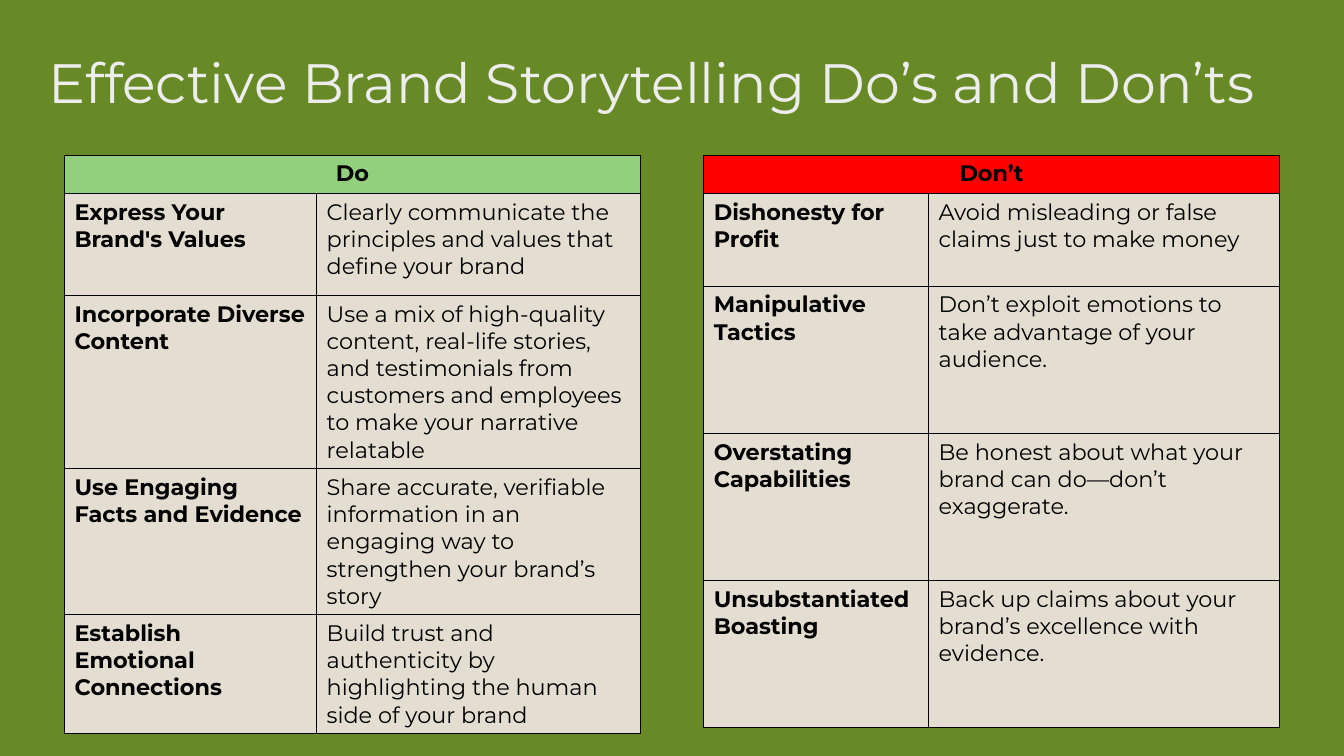
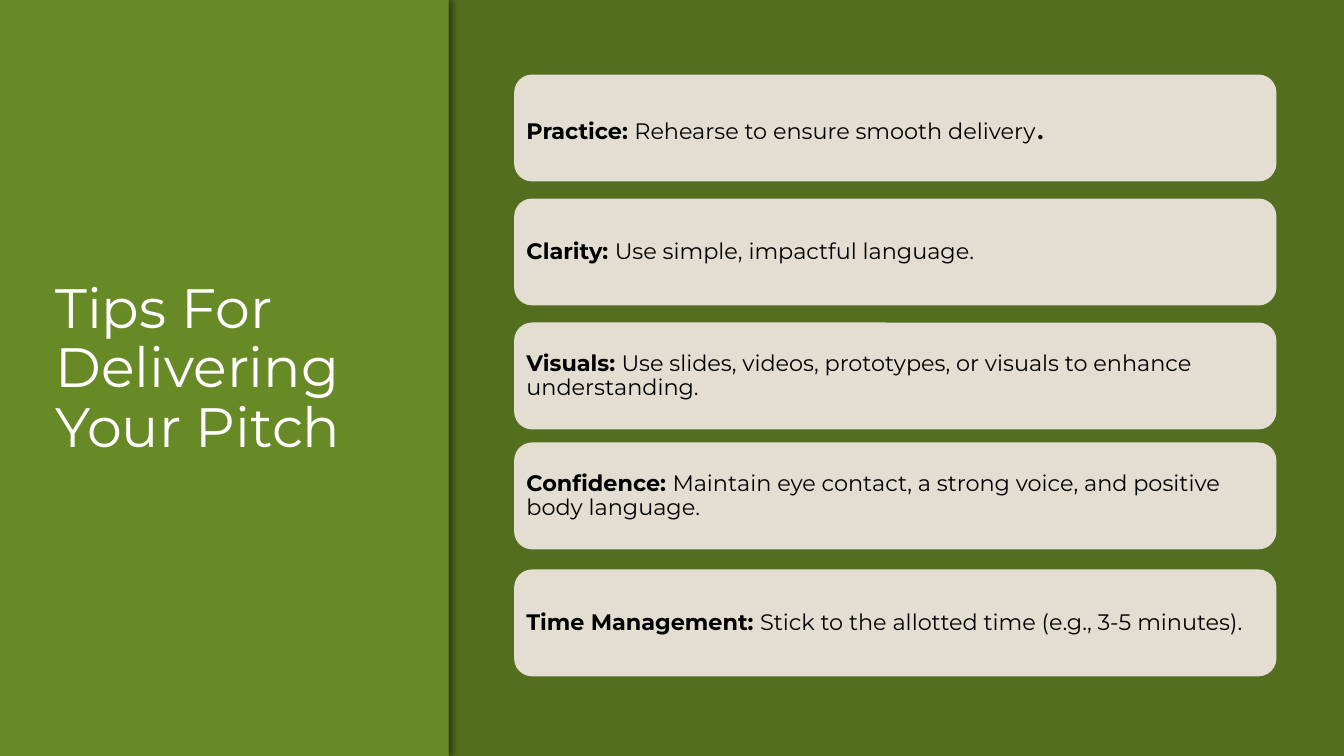
import pptx
import pptx.dml.color
import pptx.enum.shapes
import pptx.enum.text
import pptx.oxml
import pptx.oxml.ns
import pptx.util

Inches = pptx.util.Inches
Pt = pptx.util.Pt
ALIGN = pptx.enum.text.PP_ALIGN
ANCHOR = pptx.enum.text.MSO_ANCHOR
SHAPE = pptx.enum.shapes.MSO_SHAPE

COLORS = {
    "background": "678A26",
    "ink": "000000",
    "card": "E3DED1",
    "do": "93D07D",
    "dont": "FF0000",
    "title": "EDEDED",
    "white": "FFFFFF",
}
FONT = "Montserrat"

DO_ROWS = [
    ("Express Your Brand's Values",
     "Clearly communicate the principles and values that define your brand"),
    ("Incorporate Diverse Content",
     "Use a mix of high-quality content, real-life stories, and testimonials "
     "from customers and employees to make your narrative relatable"),
    ("Use Engaging Facts and Evidence",
     "Share accurate, verifiable information in an engaging way to strengthen your brand’s story"),
    ("Establish Emotional Connections",
     "Build trust and authenticity by highlighting the human side of your brand"),
]
DONT_ROWS = [
    ("Dishonesty for Profit", "Avoid misleading or false claims just to make money"),
    ("Manipulative Tactics", "Don’t exploit emotions to take advantage of your audience."),
    ("Overstating Capabilities", "Be honest about what your brand can do—don’t exaggerate."),
    ("Unsubstantiated Boasting", "Back up claims about your brand’s excellence with evidence."),
]
TIPS = [
    (0.74, "Practice: ", "Rehearse to ensure smooth delivery"),
    (1.97, "Clarity: ", "Use simple, impactful language."),
    (3.2, "Visuals: ", "Use slides, videos, prototypes, or visuals to enhance understanding."),
    (4.39, "Confidence: ", "Maintain eye contact, a strong voice, and positive body language."),
    (5.65, "Time Management: ", "Stick to the allotted time (e.g., 3-5 minutes)."),
]


def rgb(name):
    return pptx.dml.color.RGBColor.from_string(COLORS[name])


def add_xml(parent, body):
    tag, rest = body.split(" ", 1)
    namespace = pptx.oxml.ns.nsdecls("a")
    parent.append(pptx.oxml.parse_xml(f"<a:{tag} {namespace} {rest}"))


def write(paragraph, text, size=16, bold=False, color="ink", font=FONT):
    run = paragraph.add_run()
    run.text = text
    run.font.name = font
    run.font.size = Pt(size)
    run.font.bold = bold
    run.font.color.rgb = rgb(color)


class Deck:
    """Hold the shared style, the presentation and the current slide."""

    def __init__(self):
        self.presentation = pptx.Presentation()
        self.presentation.slide_width = Inches(13.33)
        self.presentation.slide_height = Inches(7.5)
        self.slide = None

    def new_slide(self):
        self.slide = self.presentation.slides.add_slide(self.presentation.slide_layouts[6])
        fill = self.slide.background.fill
        fill.solid()
        fill.fore_color.rgb = rgb("background")

    def title(self, text, left, top, width, height, color):
        frame = self.slide.shapes.add_textbox(
            Inches(left), Inches(top), Inches(width), Inches(height)).text_frame
        frame.word_wrap = True
        frame.vertical_anchor = ANCHOR.MIDDLE
        paragraph = frame.paragraphs[0]
        paragraph.line_spacing = 0.9
        write(paragraph, text, size=39.6, color=color)

    def box(self, kind, left, top, width, height, color, opacity=100):
        shape = self.slide.shapes.add_shape(
            kind, Inches(left), Inches(top), Inches(width), Inches(height))
        shape.shadow.inherit = False
        shape.fill.solid()
        shape.fill.fore_color.rgb = rgb(color)
        shape.line.fill.background()
        if opacity < 100:
            add_xml(shape.fill._xPr.find(".//" + pptx.oxml.ns.qn("a:srgbClr")),
                    f'alpha val="{opacity * 1000}"/>')
        return shape

    def drop_shadow(self, shape, blur, distance, opacity):
        effects = shape._element.spPr.find(pptx.oxml.ns.qn("a:effectLst"))
        add_xml(effects, f'outerShdw blurRad="{Pt(blur)}" dist="{Pt(distance)}" dir="0">'
                         f'<a:srgbClr val="{COLORS["ink"]}">'
                         f'<a:alpha val="{opacity * 1000}"/></a:srgbClr></a:outerShdw>')

    def card(self, top, label, text):
        shape = self.box(SHAPE.ROUNDED_RECTANGLE, 5.1, top, 7.56, 1.06, "card")
        frame = shape.text_frame
        frame.word_wrap = True
        frame.vertical_anchor = ANCHOR.MIDDLE
        frame.margin_left = frame.margin_right = Inches(0.07)
        frame.margin_top = frame.margin_bottom = Inches(0.07)
        paragraph = frame.paragraphs[0]
        paragraph.alignment = ALIGN.LEFT
        paragraph.line_spacing = 0.9
        write(paragraph, label, bold=True)
        write(paragraph, text)
        return paragraph

    def style_cell(self, cell, color):
        properties = cell._tc.get_or_add_tcPr()
        for side in "LRTB":
            add_xml(properties, f'ln{side} w="{Pt(0.6)}"><a:solidFill>'
                                f'<a:srgbClr val="{COLORS["ink"]}"/></a:solidFill></a:ln{side}>')
        cell.fill.solid()
        cell.fill.fore_color.rgb = rgb(color)

    def table(self, left, heading, color, rows, widths, heights):
        table = self.slide.shapes.add_table(
            len(heights), len(widths), Inches(left), Inches(1.54),
            Inches(sum(widths)), Inches(sum(heights))).table
        table.first_row = table.horz_banding = False
        for column, width in zip(table.columns, widths):
            column.width = Inches(width)
        for row, height in zip(table.rows, heights):
            row.height = Inches(height)
        for row_index, row in enumerate(table.rows):
            for cell in row.cells:
                self.style_cell(cell, "card" if row_index else color)
        table.cell(0, 0).merge(table.cell(0, 1))
        paragraph = table.cell(0, 0).text_frame.paragraphs[0]
        paragraph.alignment = ALIGN.CENTER
        write(paragraph, heading, bold=True)
        for row_index, texts in enumerate(rows, 1):
            for column_index, text in enumerate(texts):
                paragraph = table.cell(row_index, column_index).text_frame.paragraphs[0]
                write(paragraph, text, bold=column_index == 0)

    def save(self):
        self.presentation.save("out.pptx")


def main():
    deck = Deck()

    deck.new_slide()
    deck.title("Effective Brand Storytelling Do’s and Don’ts", 0.38, 0.36, 12.95, 0.98, "title")
    deck.table(0.64, "Do", "do", DO_ROWS, [2.5, 3.21], [0.38, 1.01, 1.72, 1.45, 1.18])
    deck.table(6.98, "Don’t", "dont", DONT_ROWS, [2.23, 3.48], [0.38, 0.92] + [1.46] * 3)

    deck.new_slide()
    deck.box(SHAPE.RECTANGLE, 4.45, 0, 8.88, 7.5, "ink", opacity=20)
    panel = deck.box(SHAPE.RECTANGLE, 0, 0, 4.45, 7.5, "background")
    deck.drop_shadow(panel, blur=4, distance=3, opacity=40)
    deck.title("Tips For Delivering Your Pitch", 0.45, 2.64, 3.56, 2.06, "white")
    paragraphs = [deck.card(*tip) for tip in TIPS]
    write(paragraphs[0], ".", size=26, font="Calibri")

    deck.save()


if __name__ == "__main__":
    main()
